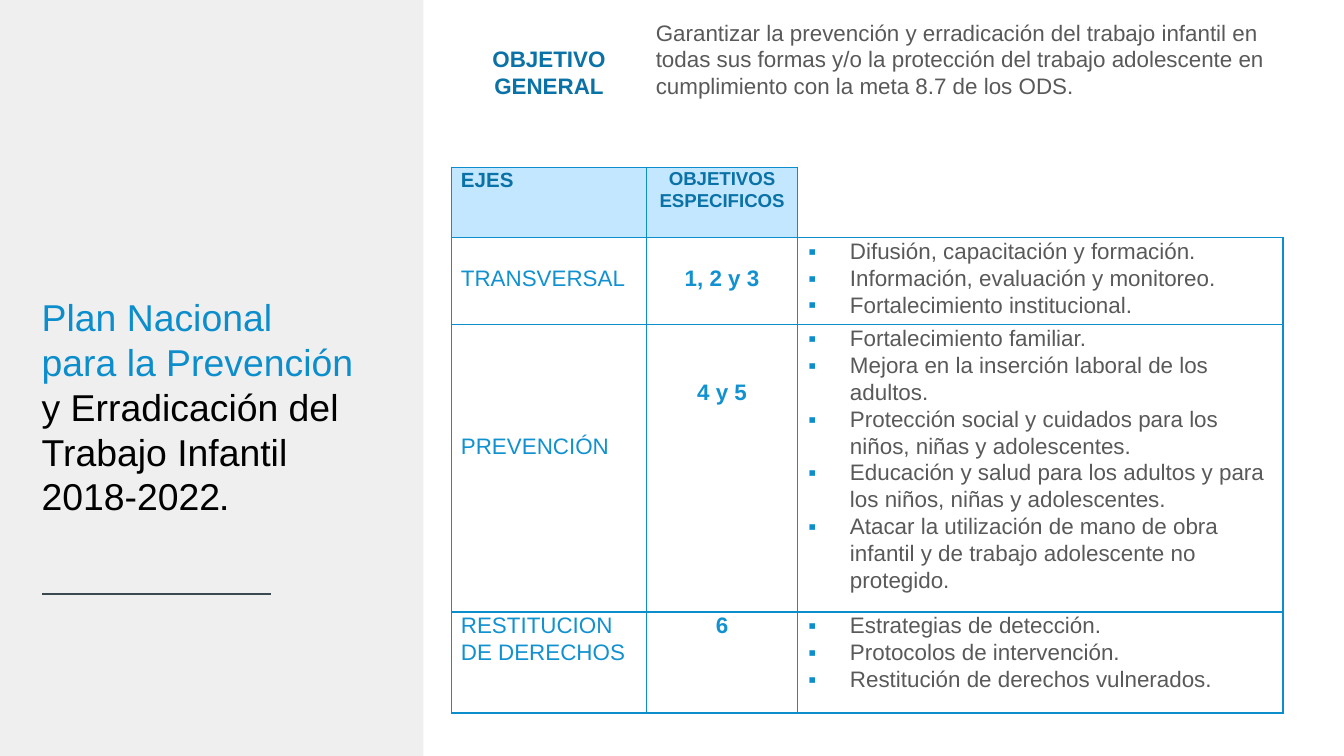
from dataclasses import dataclass

from lxml.etree import SubElement
from pptx import Presentation
from pptx.dml.color import RGBColor
from pptx.enum.shapes import MSO_CONNECTOR, MSO_SHAPE
from pptx.enum.text import MSO_ANCHOR, MSO_AUTO_SIZE, PP_ALIGN
from pptx.oxml.ns import qn
from pptx.util import Emu, Inches, Pt


@dataclass(frozen=True)
class Theme:
    font: str = "Arial"
    accent: str = "0C8DCC"
    axis: str = "1191D0"
    heading: str = "0A72A6"
    body: str = "595959"
    black: str = "000000"
    rule: str = "3A4950"
    panel: str = "EFEFEF"
    header: str = "C3E7FE"
    white: str = "FFFFFF"
    title_size: float = 20
    stop_size: float = 14
    text_size: float = 12
    axes_size: float = 11
    goals_size: float = 10
    spacing: float = 1.07


THEME = Theme()
WIDTH = Inches(10)
HEIGHT = Emu(WIDTH * 9 // 16)
LINE_STEP = Inches(0.2)


@dataclass(frozen=True)
class Entry:
    """One table cell; offset counts the text lines left free above it."""
    lines: tuple[str, ...] = ()
    color: str = THEME.body
    size: float = THEME.text_size
    bold: bool = False
    centered: bool = False
    bulleted: bool = False
    offset: int = 0
    fill: str = THEME.white
    borders: str = "LRTB"


def across(percent: float) -> Emu:
    return Emu(round(WIDTH * percent / 100))


def down(percent: float) -> Emu:
    return Emu(round(HEIGHT * percent / 100))


def rgb(color: str) -> RGBColor:
    return RGBColor.from_string(color)


def style_run(run, color: str, size: float, bold: bool = False) -> None:
    run.font.name = THEME.font
    run.font.size = Pt(size)
    run.font.bold = bold
    run.font.color.rgb = rgb(color)


def add_bullet(paragraph) -> None:
    props = paragraph._p.get_or_add_pPr()
    props.set("marL", str(Inches(0.32)))
    props.set("indent", str(Inches(-0.31)))
    color = SubElement(props, qn("a:buClr"))
    SubElement(color, qn("a:srgbClr"), val=THEME.accent)
    SubElement(props, qn("a:buFont"), typeface=THEME.font)
    SubElement(props, qn("a:buChar"), char="▪")


def set_borders(cell, sides: str) -> None:
    props = cell._tc.get_or_add_tcPr()
    for side in "LRTB":
        line = SubElement(props, qn(f"a:ln{side}"), w=str(Pt(1)))
        if side in sides:
            paint = SubElement(line, qn("a:solidFill"))
            SubElement(paint, qn("a:srgbClr"), val=THEME.accent)
        else:
            SubElement(line, qn("a:noFill"))


def fill_cell(cell, entry: Entry) -> None:
    set_borders(cell, entry.borders)
    cell.fill.solid()
    cell.fill.fore_color.rgb = rgb(entry.fill)
    cell.margin_left = cell.margin_right = Inches(0.07)
    cell.margin_top = LINE_STEP * entry.offset
    cell.margin_bottom = 0
    cell.vertical_anchor = MSO_ANCHOR.TOP
    cell.text_frame.text = "\n".join(entry.lines)
    for paragraph in cell.text_frame.paragraphs:
        paragraph.line_spacing = THEME.spacing
        paragraph.alignment = PP_ALIGN.CENTER if entry.centered else PP_ALIGN.LEFT
        if entry.bulleted:
            add_bullet(paragraph)
        for run in paragraph.runs:
            style_run(run, entry.color, entry.size, entry.bold)


def axis(*lines: str, offset: int = 0) -> Entry:
    return Entry(lines, THEME.axis, offset=offset)


def goals(numbers: str, offset: int = 0) -> Entry:
    return Entry((numbers,), THEME.axis, bold=True, centered=True, offset=offset)


def actions(*lines: str) -> Entry:
    return Entry(lines, bulleted=True)


# Table content, row by row
COLUMNS = (14.5, 11.25, 36.1)
ROWS = (19.65, 9.25, 11.55, 38.0, 13.35)
PLAN = (
    (Entry(("OBJETIVO GENERAL",), THEME.heading, bold=True, centered=True,
           offset=1, borders="B"),
     Entry(("Garantizar la prevención y erradicación del trabajo infantil en todas "
            "sus formas y/o la protección del trabajo adolescente en cumplimiento "
            "con la meta 8.7 de los ODS.",), borders="B"),
     Entry(borders="")),
    (Entry(("EJES",), THEME.heading, THEME.axes_size, bold=True, fill=THEME.header),
     Entry(("OBJETIVOS ESPECIFICOS",), THEME.heading, THEME.goals_size, bold=True,
           centered=True, fill=THEME.header),
     Entry(borders="LB")),
    (axis("TRANSVERSAL", offset=1),
     goals("1, 2 y 3", offset=1),
     actions("Difusión, capacitación y formación.",
             "Información, evaluación y monitoreo.",
             "Fortalecimiento institucional.")),
    (axis("PREVENCIÓN", offset=4),
     goals("4 y 5", offset=2),
     actions("Fortalecimiento familiar.",
             "Mejora en la inserción laboral de los adultos.",
             "Protección social y cuidados para los niños, niñas y adolescentes.",
             "Educación y salud para los adultos y para los niños, niñas y adolescentes.",
             "Atacar la utilización de mano de obra infantil y de trabajo adolescente "
             "no protegido.")),
    (axis("RESTITUCION", "DE DERECHOS"),
     goals("6"),
     actions("Estrategias de detección.",
             "Protocolos de intervención.",
             "Restitución de derechos vulnerados.")),
)
TITLE = (
    ("Plan Nacional para la Prevención ", THEME.accent, THEME.title_size, False),
    ("y Erradicación del Trabajo Infantil 2018-2022", THEME.black,
     THEME.title_size, False),
    (".", THEME.black, THEME.stop_size, True),
)


def draw_panel(slide) -> None:
    panel = slide.shapes.add_shape(MSO_SHAPE.RECTANGLE, 0, 0, across(31.5), HEIGHT)
    panel.shadow.inherit = False
    panel.fill.solid()
    panel.fill.fore_color.rgb = rgb(THEME.panel)
    panel.line.fill.background()
    # The panel goes behind the title placeholder
    slide.shapes._spTree.insert(2, panel._element)

    rule = slide.shapes.add_connector(
        MSO_CONNECTOR.STRAIGHT, across(20.15), down(78.6), across(3.1), down(78.6))
    rule.line.color.rgb = rgb(THEME.rule)
    rule.line.width = Pt(0.75)
    SubElement(rule._element.spPr, qn("a:effectLst"))


def draw_title(slide) -> None:
    title = slide.shapes.title
    title.left, title.top = across(2.1), down(38.05)
    title.width, title.height = across(25.4), down(31.65)
    frame = title.text_frame
    frame.word_wrap = True
    frame.auto_size = MSO_AUTO_SIZE.NONE
    frame.vertical_anchor = MSO_ANCHOR.TOP
    frame.margin_left, frame.margin_right = Inches(0.1), Inches(0.11)
    frame.margin_top = frame.margin_bottom = Inches(0.05)
    heading = frame.paragraphs[0]
    heading.alignment = PP_ALIGN.LEFT
    heading.line_spacing = 1.0
    for words, color, size, bold in TITLE:
        run = heading.add_run()
        run.text = words
        style_run(run, color, size, bold)


def draw_plan(slide) -> None:
    plan = slide.shapes.add_table(
        len(ROWS), len(COLUMNS), across(33.6), down(2.5),
        across(sum(COLUMNS)), down(sum(ROWS))).table
    plan.first_row = plan.horz_banding = False
    for column, share in zip(plan.columns, COLUMNS):
        column.width = across(share)
    for row, share, entries in zip(plan.rows, ROWS, PLAN):
        row.height = down(share)
        for cell, entry in zip(row.cells, entries):
            fill_cell(cell, entry)
    plan.cell(0, 1).merge(plan.cell(0, 2))


def main() -> None:
    deck = Presentation()
    deck.slide_width, deck.slide_height = WIDTH, HEIGHT
    slide = deck.slides.add_slide(deck.slide_layouts.get_by_name("Title Only"))
    draw_panel(slide)
    draw_title(slide)
    draw_plan(slide)
    deck.save("out.pptx")


if __name__ == "__main__":
    main()
